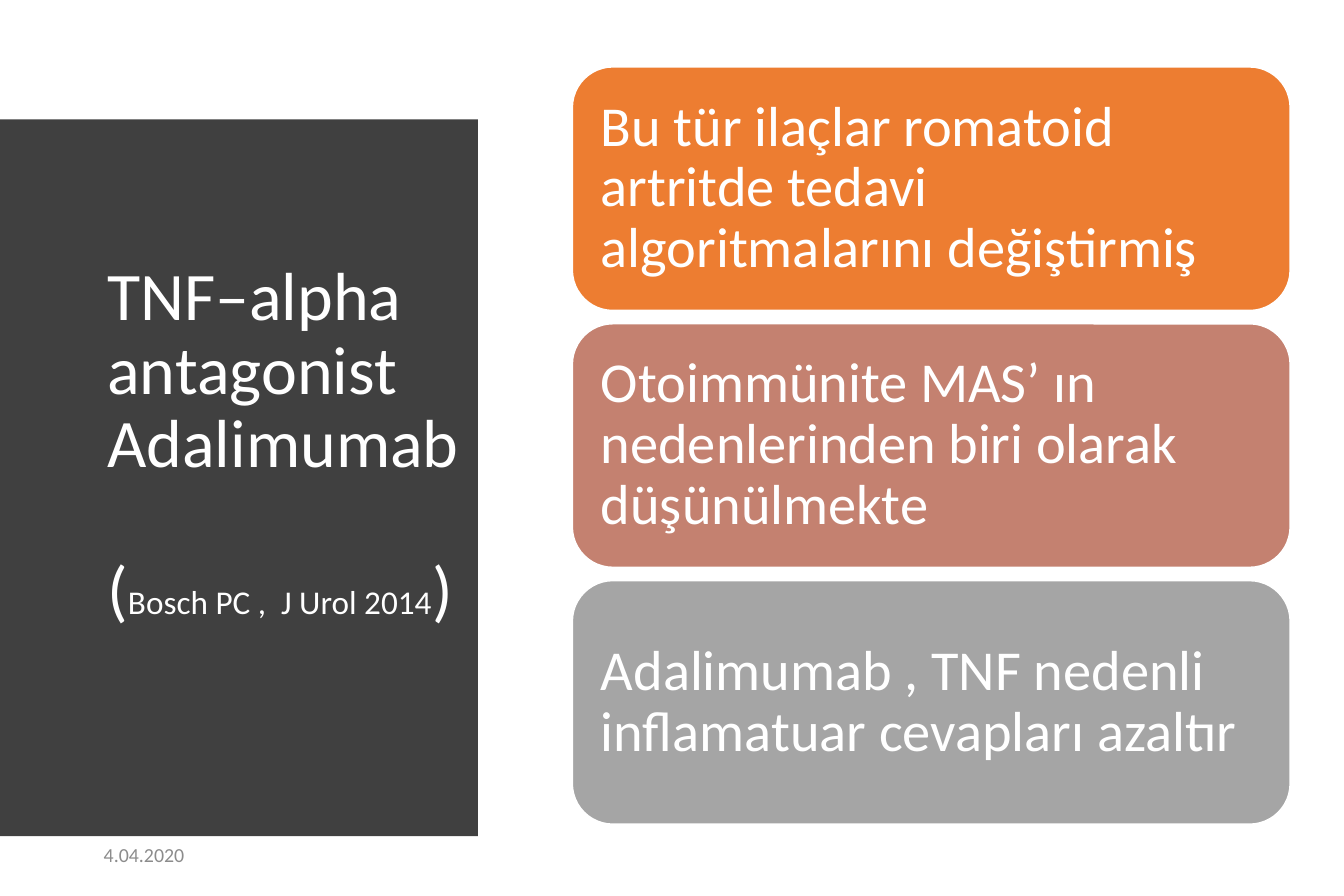
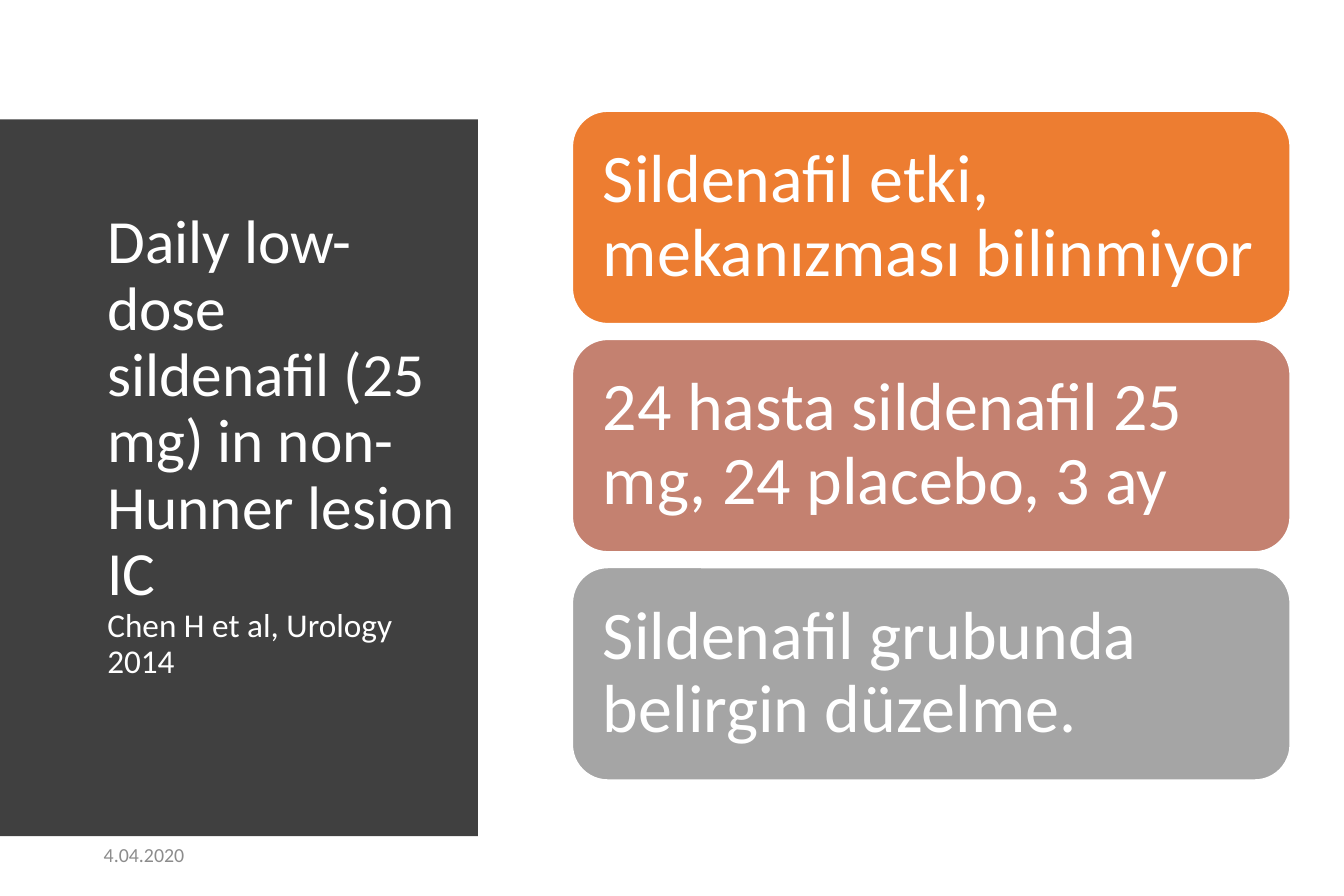
from pptx import Presentation
from pptx.dml.color import RGBColor
from pptx.enum.shapes import MSO_SHAPE as Shape
from pptx.enum.text import MSO_ANCHOR as Anchor, PP_ALIGN as Align
from pptx.util import Inches, Pt

FONT = "Calibri"
WHITE = RGBColor(0xFF, 0xFF, 0xFF)
PANEL = RGBColor(0x40, 0x40, 0x40)
DATE_GREY = RGBColor(0x8C, 0x8C, 0x8C)
CARD_COLORS = [RGBColor(0xED, 0x7D, 0x31), RGBColor(0xC4, 0x81, 0x70), RGBColor(0xA5, 0xA5, 0xA5)]

# Side panel: straight on the left, a parabola on the right
PANEL_LEFT, PANEL_TOP, PANEL_BOTTOM = 0.45, 0.52, 6.96
PANEL_CORNER, PANEL_BULGE, CURVE_STEPS = 4.28, 0.21, 40

# Cards: a column centred on one height
CARD_LEFT, CARD_WIDTH, CARDS_MIDDLE = 4.79, 6.01, 3.73

# Title paragraphs: space before in points, then runs of (text, size)
SLIDES = [
    {
        "title": [
            (0, [("TNF–alpha antagonist Adalimumab", 41)]),
            (44, [("(", 41), ("Bosch PC ,  J Urol 2014", 20), (")", 41)]),
        ],
        "cards": [
            "Bu tür ilaçlar romatoid artritde tedavi algoritmalarını değiştirmiş",
            "Otoimmünite MAS’ ın nedenlerinden biri olarak düşünülmekte",
            "Adalimumab , TNF nedenli inflamatuar cevapları azaltır",
        ],
        "card_height": 2.04, "gap": 0.11, "size": 34, "inset": 0.14,
    },
    {
        "title": [
            (0, [("Daily low-dose sildenafil (25 mg) in non-Hunner lesion IC", 37)]),
            (0, [("Chen H et al, Urology 2014", 20)]),
        ],
        "cards": [
            "Sildenafil etki, mekanızması bilinmiyor",
            "24 hasta sildenafil 25 mg, 24 placebo, 3 ay",
            "Sildenafil grubunda belirgin düzelme.",
        ],
        "card_height": 1.78, "gap": 0.13, "size": 41, "inset": 0.17,
    },
]


def write_text(shape, paragraphs, color=WHITE, line_spacing=0.9, inset_x=0.1, inset_y=0.05):
    """Fill a shape with paragraphs given as (space before, [(text, size), ...])."""
    frame = shape.text_frame
    frame.word_wrap = True
    frame.vertical_anchor = Anchor.MIDDLE
    frame.margin_left = frame.margin_right = Inches(inset_x)
    frame.margin_top = frame.margin_bottom = Inches(inset_y)
    for index, (space_before, runs) in enumerate(paragraphs):
        paragraph = frame.add_paragraph() if index else frame.paragraphs[0]
        paragraph.alignment = Align.LEFT
        paragraph.line_spacing = line_spacing
        if space_before:
            paragraph.space_before = Pt(space_before)
        for text, size in runs:
            run = paragraph.add_run()
            run.text = text
            run.font.name = FONT
            run.font.size = Pt(size)
            run.font.color.rgb = color


presentation = Presentation()
presentation.slide_width, presentation.slide_height = Inches(11.25), Inches(7.5)
blank_layout = presentation.slide_layouts[6]

panel_height = PANEL_BOTTOM - PANEL_TOP
panel_points = []
for step in range(CURVE_STEPS + 1):
    share = step / CURVE_STEPS
    bulge = PANEL_BULGE * (1 - (2 * share - 1) ** 2)
    panel_points.append((PANEL_CORNER + bulge, PANEL_TOP + panel_height * share))
panel_points.append((PANEL_LEFT, PANEL_BOTTOM))

for content in SLIDES:
    slide = presentation.slides.add_slide(blank_layout)

    # Side panel
    builder = slide.shapes.build_freeform(PANEL_LEFT, PANEL_TOP, scale=Inches(1))
    builder.add_line_segments(panel_points, close=True)
    panel = builder.convert_to_shape()
    panel.shadow.inherit = False
    panel.fill.solid()
    panel.fill.fore_color.rgb = PANEL
    panel.line.fill.background()

    # Title
    title = slide.shapes.add_textbox(Inches(0.8), Inches(1.11), Inches(3.15), Inches(5.24))
    write_text(title, content["title"])

    # Cards
    height, gap, inset = content["card_height"], content["gap"], content["inset"]
    count = len(content["cards"])
    first_top = CARDS_MIDDLE - (count * height + (count - 1) * gap) / 2
    for index, (text, color) in enumerate(zip(content["cards"], CARD_COLORS)):
        top = first_top + index * (height + gap)
        card = slide.shapes.add_shape(Shape.ROUNDED_RECTANGLE, Inches(CARD_LEFT), Inches(top),
                                      Inches(CARD_WIDTH), Inches(height))
        card.shadow.inherit = False
        card.fill.solid()
        card.fill.fore_color.rgb = color
        card.line.color.rgb = WHITE
        card.line.width = Pt(1)
        write_text(card, [(0, [(text, content["size"])])], inset_x=inset, inset_y=inset)

    # Date
    date = slide.shapes.add_textbox(Inches(0.77), Inches(6.95), Inches(2.53), Inches(0.4))
    write_text(date, [(0, [("4.04.2020", 12)])], color=DATE_GREY, line_spacing=1.0)

presentation.save("out.pptx")
